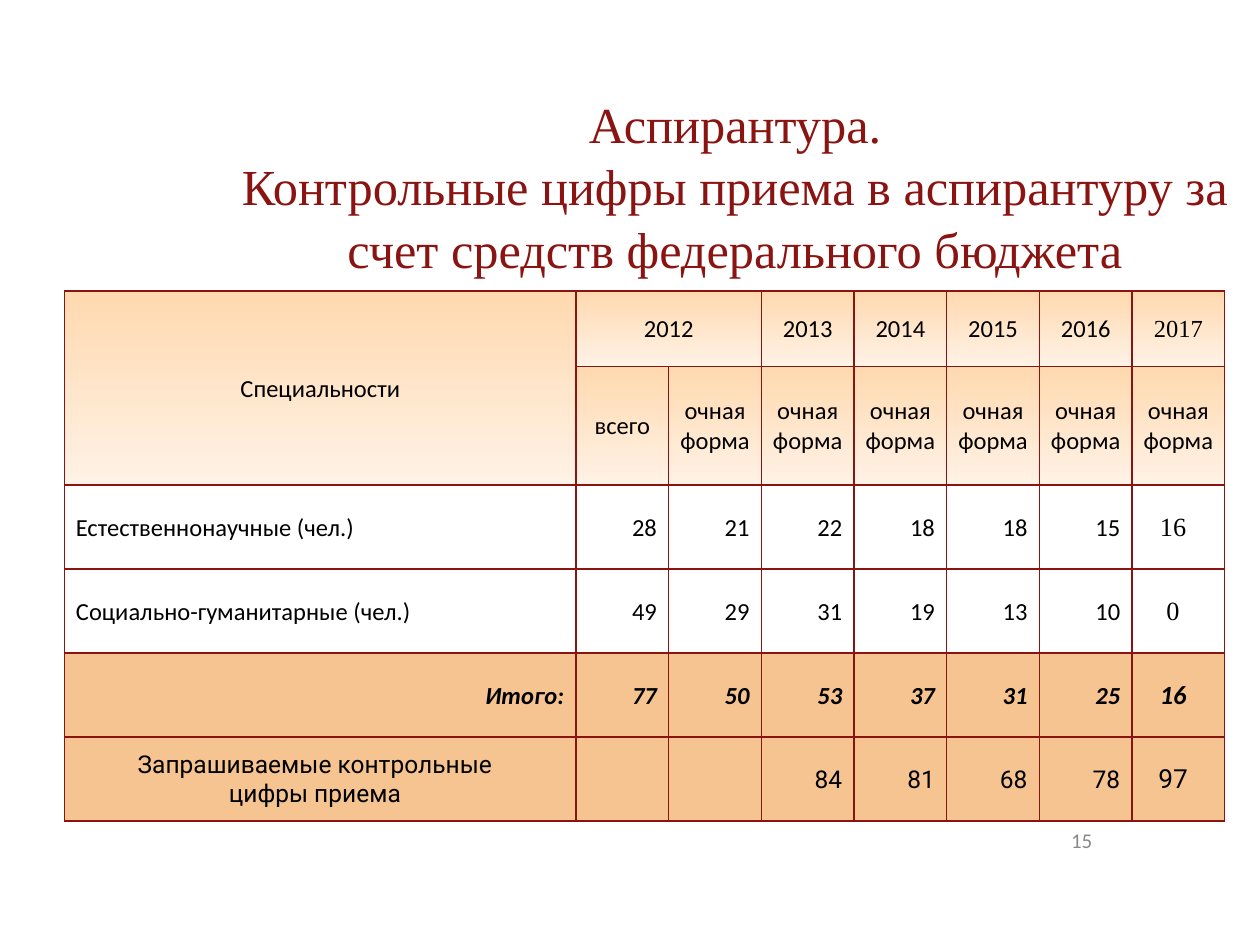
from lxml.etree import SubElement
from pptx import Presentation
from pptx.dml.color import RGBColor
from pptx.enum.text import MSO_ANCHOR, PP_ALIGN
from pptx.oxml.ns import qn
from pptx.util import Pt

LEFT, CENTER, RIGHT = PP_ALIGN.LEFT, PP_ALIGN.CENTER, PP_ALIGN.RIGHT
YEARS = ["2013", "2014", "2015", "2016", "2017"]
STUDY_FORM = "очная форма"
ROWS = [
    ["Специальности", "2012", "", *YEARS],
    ["", "всего", *[STUDY_FORM] * 5, "очная\nформа"],
    ["Естественнонаучные (чел.)", "28", "21", "22", "18", "18", "15", "16"],
    ["Социально-гуманитарные (чел.)", "49", "29", "31", "19", "13", "10", "0"],
    ["Итого:", "77", "50", "53", "37", "31", "25", "16"],
    ["Запрашиваемые контрольные\nцифры приема", "", "", "84", "81", "68", "78", "97"],
]
HEADER_ROWS, TOTAL_ROW, REQUEST_ROW = 2, 4, 5
LAST_COLUMN = len(ROWS[0]) - 1
COLUMN_WIDTHS = [292.3] + [52.97] * LAST_COLUMN
ROW_HEIGHTS = [43.2, 67.7] + [48] * 4


def color(value):
    return RGBColor.from_string(value)


def apply(target, values):
    for name, value in values.items():
        setattr(target, name, value)


class SlideBuilder:
    """Holds the style and the current slide and adds its elements."""

    dark_red, black, gray = "8A1411", "000000", "898989"
    header_top, header_bottom, total_fill = "FFD9AF", "FFF2E6", "F5C491"
    body_font, title_font, request_font = "Calibri", "Times New Roman", "Roboto"

    def __init__(self, page):
        self.page = page

    def paragraphs(self, frame, text, font, fill, align, spacing=None):
        for index, line in enumerate(text.split("\n")):
            para = frame.add_paragraph() if index else frame.paragraphs[0]
            para.text = line
            apply(para, {"alignment": align, "line_spacing": spacing})
            for span in para.runs:
                apply(span.font, font)
                span.font.color.rgb = color(fill)

    def text(self, bounds, text, font, fill, align, wrap=True, spacing=None):
        box = self.page.shapes.add_textbox(*map(Pt, bounds))
        margins = dict.fromkeys(
            ["margin_left", "margin_right", "margin_top", "margin_bottom"], Pt(3.6))
        apply(box.text_frame, {
            "word_wrap": wrap, "vertical_anchor": MSO_ANCHOR.MIDDLE, **margins})
        self.paragraphs(box.text_frame, text, font, fill, align, spacing)

    def borders(self, cell):
        properties = cell._tc.get_or_add_tcPr()
        for index, side in enumerate(["lnL", "lnR", "lnT", "lnB"]):
            line = SubElement(properties, qn(f"a:{side}"), w=str(Pt(1)))
            fill = SubElement(line, qn("a:solidFill"))
            SubElement(fill, qn("a:srgbClr"), val=self.dark_red)
            properties.insert(index, line)

    def fill(self, cell, row):
        if row < HEADER_ROWS:
            cell.fill.gradient()
            cell.fill.gradient_angle = 270
            shades = [self.header_top, self.header_bottom]
            for stop, shade in zip(cell.fill.gradient_stops, shades):
                stop.color.rgb = color(shade)
        elif row >= TOTAL_ROW:
            cell.fill.solid()
            cell.fill.fore_color.rgb = color(self.total_fill)
        else:
            cell.fill.background()

    def alignment(self, row, column):
        if row < HEADER_ROWS or column == LAST_COLUMN:
            return CENTER
        if column:
            return RIGHT
        return {TOTAL_ROW: RIGHT, REQUEST_ROW: CENTER}.get(row, LEFT)

    def font(self, row, column):
        last = column == LAST_COLUMN
        name = self.body_font
        if row == REQUEST_ROW:
            name = self.request_font
        elif last and row not in (1, TOTAL_ROW):
            name = self.title_font
        return {
            "name": name,
            "size": Pt(15 if last and row >= HEADER_ROWS else 14),
            "bold": row == TOTAL_ROW,
            "italic": row == TOTAL_ROW,
        }

    def cell(self, cell, text, row, column):
        align = self.alignment(row, column)
        body = row >= HEADER_ROWS
        apply(cell, {
            "vertical_anchor": MSO_ANCHOR.MIDDLE,
            "margin_left": Pt(6.5 if align == LEFT else 0.7),
            "margin_right": Pt(6.8 if body and align != LEFT else 0.7),
            "margin_top": Pt(0.7),
            "margin_bottom": Pt(0),
        })
        self.fill(cell, row)
        self.borders(cell)
        if text:
            self.paragraphs(
                cell.text_frame, text, self.font(row, column), self.black, align)

    def table(self, left, top):
        bounds = left, top, sum(COLUMN_WIDTHS), sum(ROW_HEIGHTS)
        table = self.page.shapes.add_table(
            len(ROWS), len(COLUMN_WIDTHS), *map(Pt, bounds)).table
        apply(table, {"first_row": False, "horz_banding": False})
        for column, width in zip(table.columns, COLUMN_WIDTHS):
            column.width = Pt(width)
        for row, height in zip(table.rows, ROW_HEIGHTS):
            row.height = Pt(height)
        table.cell(0, 0).merge(table.cell(1, 0))
        table.cell(0, 1).merge(table.cell(0, 2))
        for row, texts in enumerate(ROWS):
            for column, text in enumerate(texts):
                self.cell(table.cell(row, column), text, row, column)


def main():
    deck = Presentation()
    apply(deck, {"slide_width": Pt(720), "slide_height": Pt(540)})
    builder = SlideBuilder(deck.slides.add_slide(deck.slide_layouts[6]))
    builder.text(
        (608.4, 469.5, 19.4, 21.6), "15",
        {"name": builder.body_font, "size": Pt(12)}, builder.gray, RIGHT, wrap=False)
    builder.text(
        (133.2, 60.5, 573.8, 90),
        "Аспирантура.\vКонтрольные цифры приема в аспирантуру за "
        "счет средств федерального бюджета",
        {"name": builder.title_font, "size": Pt(28.8)}, builder.dark_red, CENTER,
        spacing=1.04)
    builder.table(36.9, 166.3)
    deck.save("out.pptx")


if __name__ == "__main__":
    main()
